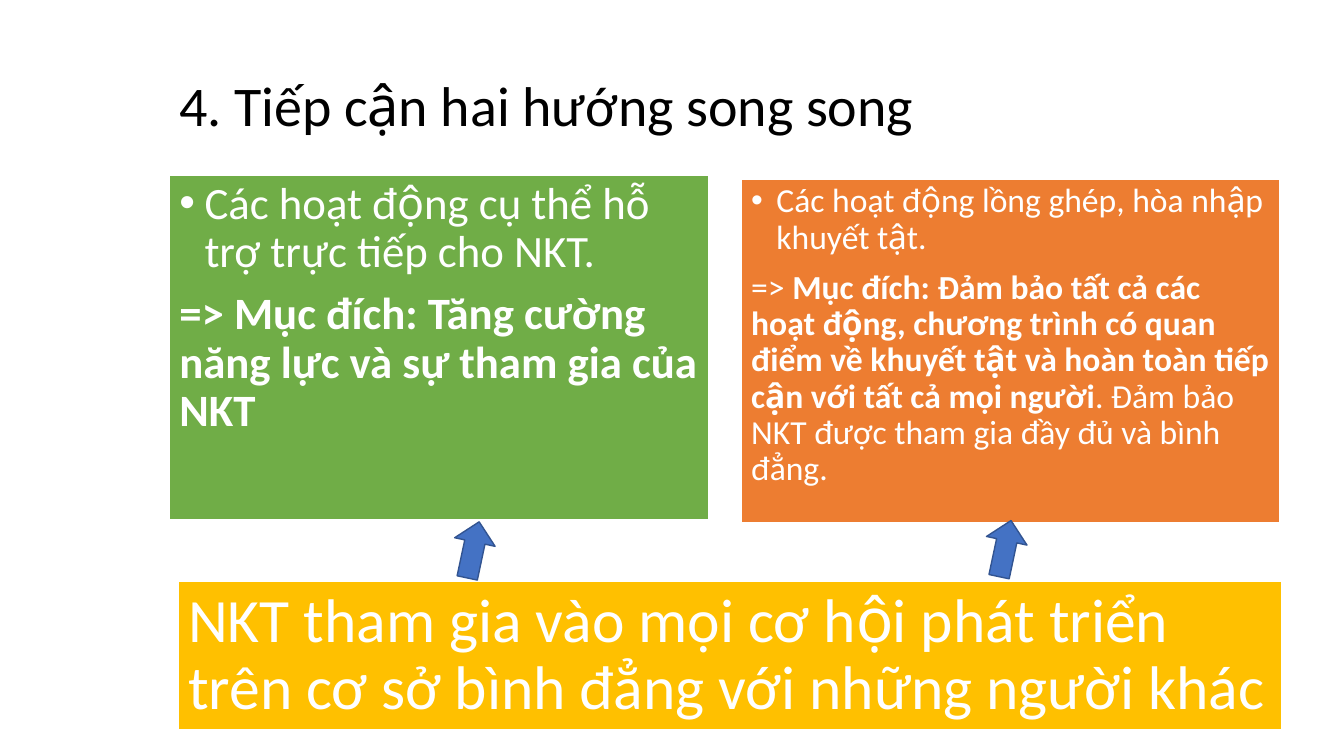
from pptx import Presentation
from pptx.dml.color import RGBColor
from pptx.enum.shapes import MSO_SHAPE
from pptx.enum.text import MSO_ANCHOR, PP_ALIGN
from pptx.oxml.ns import qn
from pptx.util import Pt
from lxml import etree

RECTANGLE, ARROW = MSO_SHAPE.RECTANGLE, MSO_SHAPE.RIGHT_ARROW
TOP, MIDDLE = MSO_ANCHOR.TOP, MSO_ANCHOR.MIDDLE
LEFT = PP_ALIGN.LEFT
FONT = "Calibri"
WHITE, BLACK = "FFFFFF", "000000"
BULLET_INDENT = 18

HEADING = "4. Tiếp cận hai hướng song song"
GOAL = "NKT tham gia vào mọi cơ hội phát triển trên cơ sở bình đẳng với những người khác"

# Each paragraph: (has bullet, [(text, bold), ...])
DIRECT_SUPPORT = [
    (True, [("Các hoạt động cụ thể hỗ trợ trực tiếp cho NKT.", False)]),
    (False, [("=> Mục đích: Tăng cường năng lực và sự tham gia của NKT", True)]),
]
MAINSTREAMING = [
    (True, [("Các hoạt động lồng ghép, hòa nhập khuyết tật.", False)]),
    (False, [
        ("=> ", False),
        ("Mục đích: Đảm bảo tất cả các hoạt động, chương trình có quan điểm "
         "về khuyết tật và hoàn toàn tiếp cận với tất cả mọi người", True),
        (". Đảm bảo NKT được tham gia đầy đủ và bình đẳng.", False),
    ]),
]

# Boxes: (left, top, width, height), fill, font size, anchor, paragraphs
BOXES = [
    ((127.3, 415.2, 788.8, 106.6), "FFC000", 44, MIDDLE, [(False, [(GOAL, False)])]),
    ((121, 125.3, 385.2, 246.2), "70AD47", 32, TOP, DIRECT_SUPPORT),
    ((529.5, 127.7, 385.2, 246.2), "ED7D31", 24, TOP, MAINSTREAMING),
]
HEADING_PLACE = (121, 20.9, 807.1, 106.6)
ARROW_SIZE = (41, 29.5)
ARROW_CORNERS = [(317.5, 378), (697.4, 377.1)]
ARROW_ROTATION = 282

# Vietnamese vowels, and the same vowels with each tone (keyed by combining mark)
VOWELS = "aăâeêioôơuưy"
TONED_VOWELS = {
    0x300: "àằầèềìòồờùừỳ",
    0x301: "áắấéếíóốớúứý",
    0x303: "ãẵẫẽễĩõỗỡũữỹ",
    0x309: "ảẳẩẻểỉỏổởủửỷ",
    0x323: "ạặậẹệịọộợụựỵ",
}
TONE_MARKS = {
    ord(toned): vowel + chr(mark)
    for mark, row in TONED_VOWELS.items()
    for toned, vowel in zip(row, VOWELS)
}


def separate_tones(text):
    """Spell each toned vowel as vowel plus combining mark, as Vietnamese keyboards do."""
    return text.translate(TONE_MARKS)


def color(hex_value):
    return RGBColor.from_string(hex_value)


def points(values):
    return [Pt(value) for value in values]


def add_filled_shape(slide, kind, place, fill, line, line_width):
    shape = slide.shapes.add_shape(kind, *points(place))
    shape.shadow.inherit = False
    shape.fill.solid()
    shape.fill.fore_color.rgb = color(fill)
    shape.line.color.rgb = color(line)
    shape.line.width = Pt(line_width)
    return shape


def add_bullet(paragraph):
    properties = paragraph._p.get_or_add_pPr()
    properties.set("marL", str(Pt(BULLET_INDENT)))
    properties.set("indent", str(-Pt(BULLET_INDENT)))
    etree.SubElement(properties, qn("a:buFont")).set("typeface", "Arial")
    etree.SubElement(properties, qn("a:buChar")).set("char", "•")


def write_text(shape, paragraphs, size, text_color, anchor, line_spacing):
    frame = shape.text_frame
    frame.word_wrap = True
    frame.vertical_anchor = anchor
    for index, (has_bullet, runs) in enumerate(paragraphs):
        paragraph = frame.add_paragraph() if index else frame.paragraphs[0]
        paragraph.alignment = LEFT
        paragraph.line_spacing = line_spacing
        if index:
            paragraph.space_before = Pt(10)
        if has_bullet:
            add_bullet(paragraph)
        for text, bold in runs:
            run = paragraph.add_run()
            run.text = separate_tones(text)
            for name, value in {"name": FONT, "size": Pt(size), "bold": bold}.items():
                setattr(run.font, name, value)
            run.font.color.rgb = color(text_color)


def main():
    presentation = Presentation()
    presentation.slide_width, presentation.slide_height = Pt(960), Pt(540)
    slide = presentation.slides.add_slide(presentation.slide_layouts[6])

    for place, fill, size, anchor, paragraphs in BOXES:
        box = add_filled_shape(slide, RECTANGLE, place, fill, WHITE, 1.5)
        write_text(box, paragraphs, size, WHITE, anchor, 0.9)

    heading = slide.shapes.add_textbox(*points(HEADING_PLACE))
    write_text(heading, [(False, [(HEADING, False)])], 40, BLACK, MIDDLE, 1.0)

    for corner in ARROW_CORNERS:
        arrow = add_filled_shape(slide, ARROW, corner + ARROW_SIZE, "4472C4", "325491", 1)
        arrow.rotation = ARROW_ROTATION

    presentation.save("out.pptx")


if __name__ == "__main__":
    main()
